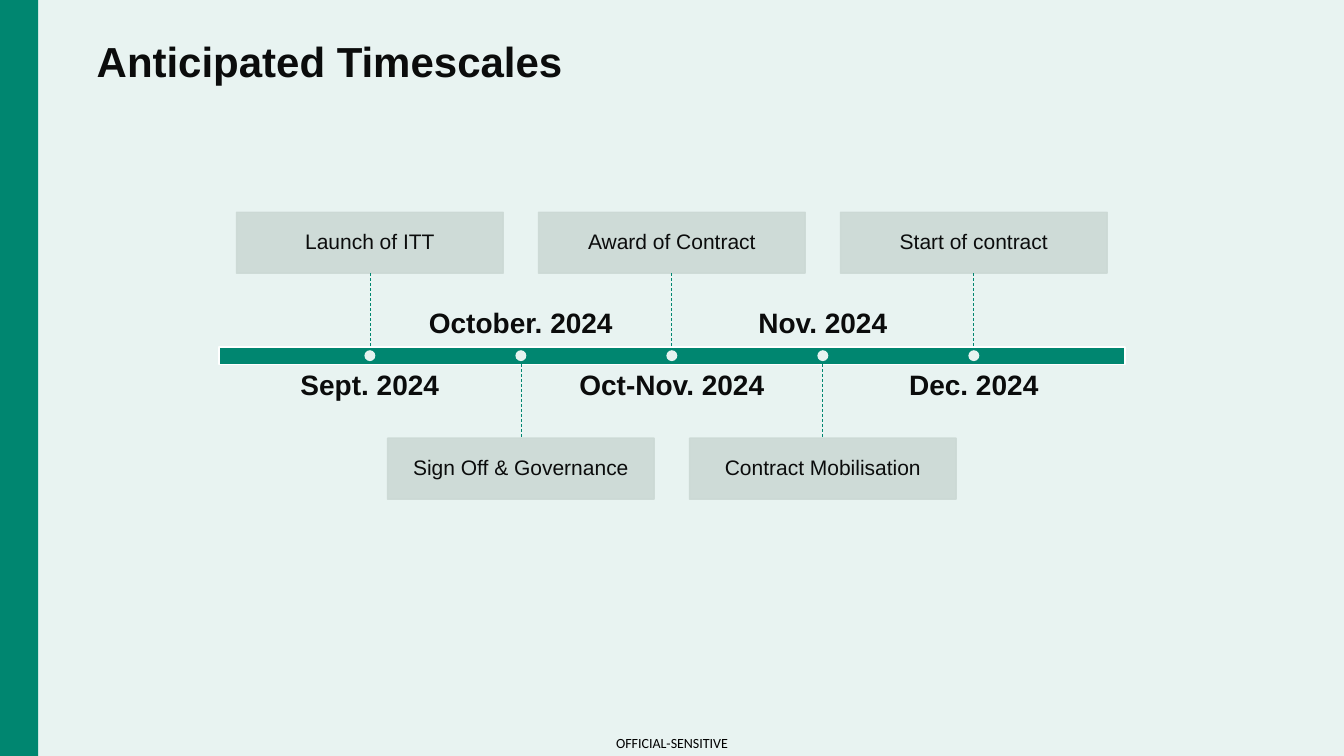
"""Build the Anticipated Timescales slide: five milestones on a horizontal bar."""
from lxml import etree
from pptx import Presentation
from pptx.dml.color import RGBColor
from pptx.enum.dml import MSO_LINE
from pptx.enum.shapes import MSO_CONNECTOR, MSO_SHAPE
from pptx.enum.text import MSO_ANCHOR, MSO_AUTO_SIZE, PP_ALIGN
from pptx.oxml.ns import qn
from pptx.util import Pt

RECTANGLE, OVAL = MSO_SHAPE.RECTANGLE, MSO_SHAPE.OVAL
STRAIGHT, DASH = MSO_CONNECTOR.STRAIGHT, MSO_LINE.DASH
TOP, MIDDLE, BOTTOM = MSO_ANCHOR.TOP, MSO_ANCHOR.MIDDLE, MSO_ANCHOR.BOTTOM
LEFT, CENTER = PP_ALIGN.LEFT, PP_ALIGN.CENTER
NO_AUTOFIT = MSO_AUTO_SIZE.NONE

PALE_MINT = RGBColor(0xE8, 0xF3, 0xF1)
GREEN = RGBColor(0x00, 0x86, 0x70)
GREY_GREEN = RGBColor(0xCC, 0xD9, 0xD5)
INK = RGBColor(0x0B, 0x0C, 0x0C)
WHITE = RGBColor(0xFF, 0xFF, 0xFF)
BLACK = RGBColor(0x00, 0x00, 0x00)

FIRST_CENTER, STEP = 264.2, 107.85
BAR_TOP, BAR_BOTTOM = 247.8, 260.3
BOX_WIDTH, BOX_HEIGHT = 190.4, 43.6
DATE_WIDTH, DATE_HEIGHT = 172.8, 35.2
DOT_SIZE = 7.8
MILESTONES = [
    ("Sept. 2024", "Launch of ITT"),
    ("October. 2024", "Sign Off & Governance"),
    ("Oct-Nov. 2024", "Award of Contract"),
    ("Nov. 2024", "Contract Mobilisation"),
    ("Dec. 2024", "Start of contract"),
]


def write_text(shape, text, size, bold=False, font="Arial", color=INK,
               align=CENTER, anchor=MIDDLE, margins=(0, 0, 0, 0), spacing=0.9):
    frame = shape.text_frame
    frame.word_wrap = True
    frame.auto_size = NO_AUTOFIT
    frame.vertical_anchor = anchor
    (frame.margin_left, frame.margin_top,
     frame.margin_right, frame.margin_bottom) = [Pt(margin) for margin in margins]
    paragraph = frame.paragraphs[0]
    paragraph.alignment = align
    paragraph.line_spacing = spacing
    run = paragraph.add_run()
    run.text = text
    run.font.name = font
    run.font.size = Pt(size)
    run.font.bold = bold
    run.font.color.rgb = color


def add_block(kind, left, top, width, height, fill, line=None, opacity=100):
    shape = slide.shapes.add_shape(kind, Pt(left), Pt(top), Pt(width), Pt(height))
    shape.shadow.inherit = False
    shape.fill.solid()
    shape.fill.fore_color.rgb = fill
    if line is None:
        shape.line.fill.background()
    else:
        shape.line.color.rgb = line
        shape.line.width = Pt(1)
    if opacity < 100:
        for color in shape._element.spPr.iter(qn("a:srgbClr")):
            etree.SubElement(color, qn("a:alpha"), val=str(opacity * 1000))
    return shape


presentation = Presentation()
presentation.slide_width, presentation.slide_height = Pt(960), Pt(540)
slide = presentation.slides.add_slide(presentation.slide_layouts[5])
slide.background.fill.solid()
slide.background.fill.fore_color.rgb = PALE_MINT

add_block(RECTANGLE, 0, 0, 27.2, 540, GREEN)
marking = slide.shapes.add_textbox(Pt(428.5), Pt(519.4), Pt(103), Pt(20.6))
write_text(marking, "OFFICIAL-SENSITIVE", 10, font="Calibri", color=BLACK, spacing=1.1)

title = slide.shapes.title
title.left, title.top, title.width, title.height = Pt(60.5), Pt(29.5), Pt(728), Pt(32.4)
write_text(title, "Anticipated Timescales", 30, bold=True, align=LEFT, anchor=TOP,
           margins=(8.6, 0, 0, 0))

add_block(RECTANGLE, 156.3, BAR_TOP, 647.4, BAR_BOTTOM - BAR_TOP, GREEN, line=WHITE)

for index, (date, event) in enumerate(MILESTONES):
    center = FIRST_CENTER + index * STEP
    if index % 2 == 0:
        box_top, date_top, date_anchor = 151.6, 265.5, TOP
        line_top, line_bottom = box_top + BOX_HEIGHT, BAR_TOP
    else:
        box_top, date_top, date_anchor = 313, 207.4, BOTTOM
        line_top, line_bottom = BAR_BOTTOM, box_top

    date_label = slide.shapes.add_textbox(Pt(center - DATE_WIDTH / 2), Pt(date_top),
                                          Pt(DATE_WIDTH), Pt(DATE_HEIGHT))
    write_text(date_label, date, 20, bold=True, anchor=date_anchor)

    event_box = add_block(RECTANGLE, center - BOX_WIDTH / 2, box_top, BOX_WIDTH,
                          BOX_HEIGHT, GREY_GREEN, line=GREY_GREEN, opacity=90)
    write_text(event_box, event, 15, margins=(11.5, 11.5, 11.5, 11.5))

    connector = slide.shapes.add_connector(STRAIGHT, Pt(center), Pt(line_top),
                                           Pt(center), Pt(line_bottom))
    connector.line.color.rgb = GREEN
    connector.line.width = Pt(0.5)
    connector.line.dash_style = DASH
    etree.SubElement(connector._element.spPr, qn("a:effectLst"))

    add_block(OVAL, center - DOT_SIZE / 2, (BAR_TOP + BAR_BOTTOM - DOT_SIZE) / 2,
              DOT_SIZE, DOT_SIZE, WHITE, opacity=90)

presentation.save("out.pptx")
